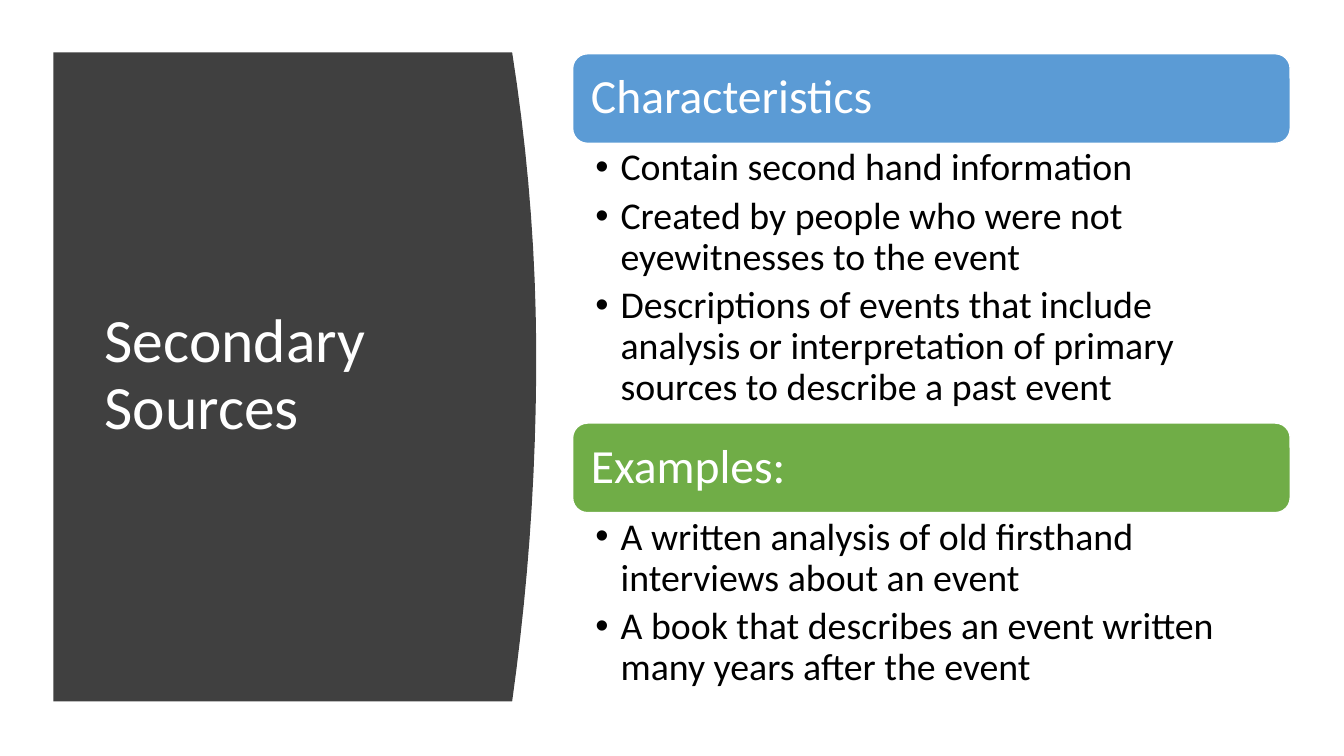
from lxml import etree
from pptx import Presentation
from pptx.dml.color import RGBColor
from pptx.enum.shapes import MSO_SHAPE
from pptx.enum.text import MSO_ANCHOR, PP_ALIGN
from pptx.oxml.ns import qn
from pptx.util import Pt

ROUND = MSO_SHAPE.ROUNDED_RECTANGLE
TOP, MIDDLE = MSO_ANCHOR.TOP, MSO_ANCHOR.MIDDLE
LEFT = PP_ALIGN.LEFT
WHITE = RGBColor(0xFF, 0xFF, 0xFF)
BLACK = RGBColor(0, 0, 0)
GRAY = RGBColor(0x40, 0x40, 0x40)
BLUE = RGBColor(0x5B, 0x9B, 0xD5)
GREEN = RGBColor(0x70, 0xAD, 0x47)

# Left and width shared by the headers and their lists
COL_X, COL_W, HEAD_H = 409, 512.6, 64
TOPICS = [
    (38.4, BLUE, "Characteristics", 199.4, [
        "Contain second hand information",
        "Created by people who were not eyewitnesses to the event",
        "Descriptions of events that include analysis or interpretation "
        "of primary sources to describe a past event",
    ]),
    (302.2, GREEN, "Examples:", 133.2, [
        "A written analysis of old firsthand interviews about an event",
        "A book that describes an event written many years after the event",
    ]),
]


def bullet(para, indent):
    props = para._p.get_or_add_pPr()
    props.set("marL", str(Pt(indent)))
    props.set("indent", str(-Pt(indent)))
    etree.SubElement(props, qn("a:buFont")).set("typeface", "Arial")
    etree.SubElement(props, qn("a:buChar")).set("char", "•")


def write(frame, lines, size, color, font, pad, anchor=MIDDLE, after=0,
          indent=0):
    """Fill a text frame; pad is left, top, right, bottom in points."""
    frame.word_wrap = True
    frame.vertical_anchor = anchor
    (frame.margin_left, frame.margin_top,
     frame.margin_right, frame.margin_bottom) = map(Pt, pad)
    for i, line in enumerate(lines):
        para = frame.add_paragraph() if i else frame.paragraphs[0]
        para.alignment = LEFT
        para.line_spacing = 0.9
        para.space_after = Pt(after)
        if indent:
            bullet(para, indent)
        run = para.add_run()
        run.text = line
        run.font.name = font
        run.font.size = Pt(size)
        run.font.color.rgb = color


class Deck:
    font = "Calibri"

    def __init__(self):
        self.prs = Presentation()
        self.prs.slide_width, self.prs.slide_height = Pt(960), Pt(540)
        self.slide = self.prs.slides.add_slide(self.prs.slide_layouts[6])
        self.shapes = self.slide.shapes

    def panel(self, left, top, right, low, tip, peak, steps=20):
        """Draw a panel whose right edge bulges to tip at height peak."""
        pen = self.shapes.build_freeform(Pt(left), Pt(top))
        edge = []
        for i in range(steps + 1):
            y = top + (low - top) * i / steps
            reach = peak - top if y < peak else low - peak
            x = tip - (tip - right) * ((y - peak) / reach) ** 2
            edge.append((Pt(x), Pt(y)))
        pen.add_line_segments(edge + [(Pt(left), Pt(low))], close=True)
        shape = pen.convert_to_shape()
        shape.shadow.inherit = False
        shape.fill.solid()
        shape.fill.fore_color.rgb = GRAY
        shape.line.fill.background()

    def head(self, top, color, text):
        shape = self.shapes.add_shape(
            ROUND, Pt(COL_X), Pt(top), Pt(COL_W), Pt(HEAD_H))
        shape.shadow.inherit = False
        shape.fill.solid()
        shape.fill.fore_color.rgb = color
        shape.line.color.rgb = WHITE
        shape.line.width = Pt(1)
        write(shape.text_frame, [text], 34, WHITE, self.font,
              (10, 10, 10, 10))

    def text(self, box, lines, size, color, **style):
        frame = self.shapes.add_textbox(*map(Pt, box)).text_frame
        write(frame, lines, size, color, self.font, **style)


def main():
    deck = Deck()
    deck.panel(38.2, 37.4, 365.8, 501.1, 383, 255.6)
    deck.text((67.7, 80, 269.3, 377.3), ["Secondary Sources"], 44, WHITE,
              pad=(7.2, 3.6, 7.2, 3.6))
    for top, color, name, height, points in TOPICS:
        deck.head(top, color, name)
        deck.text((COL_X, top + HEAD_H, COL_W, height), points, 27, BLACK,
                  pad=(16.3, 3.6, 18.7, 3.6), anchor=TOP, after=5.4,
                  indent=18)
    deck.prs.save("out.pptx")


if __name__ == "__main__":
    main()
